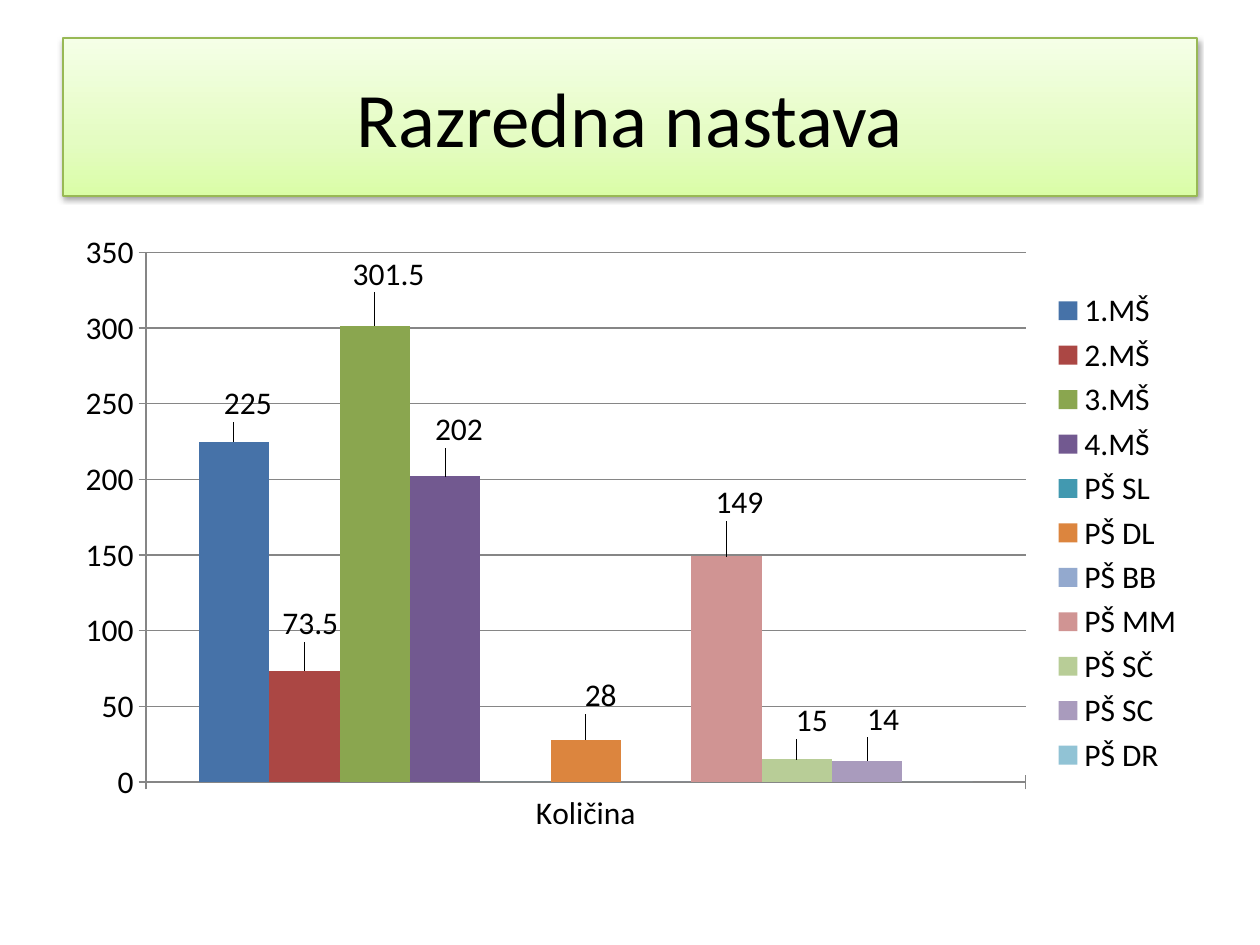
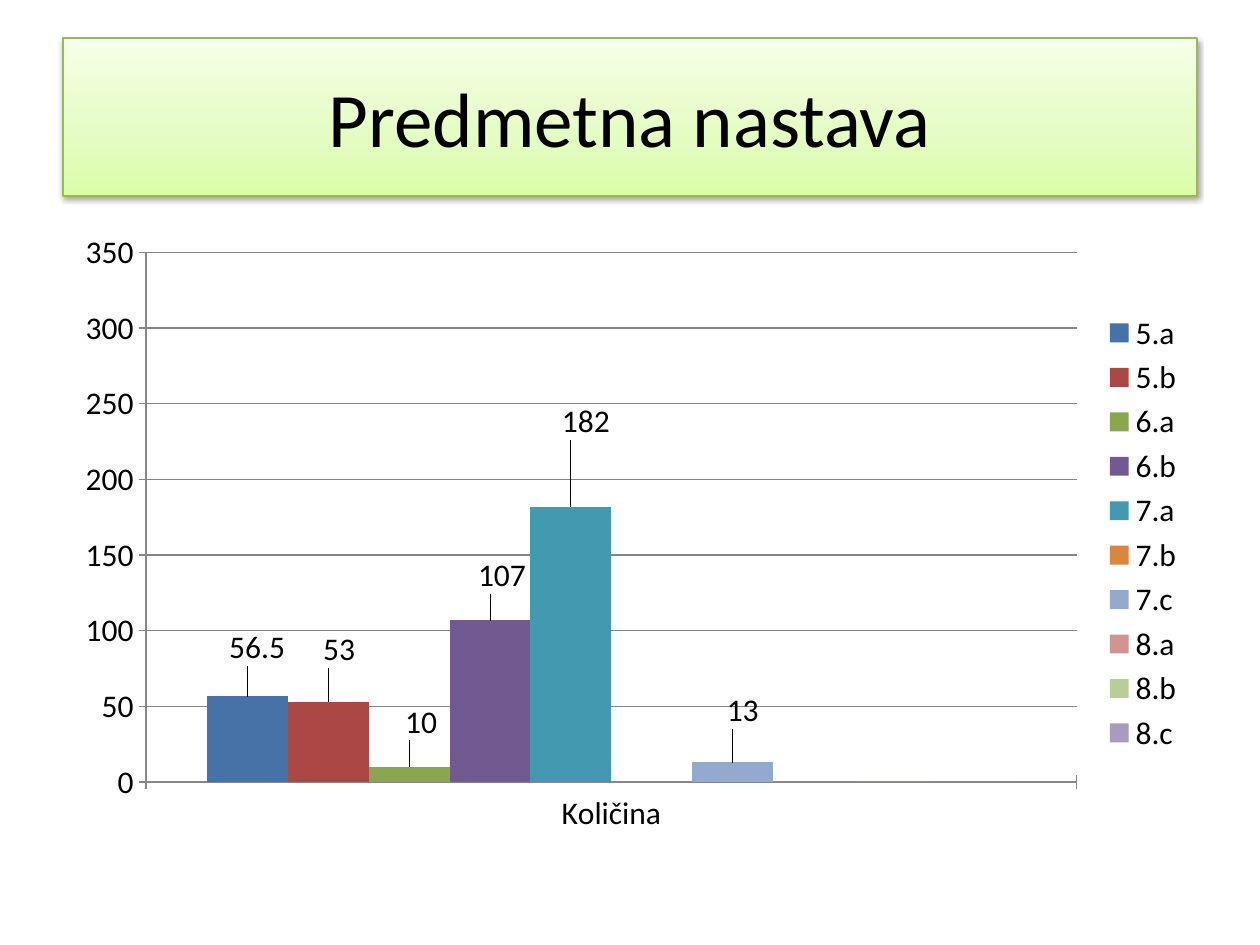
import lxml.etree
import pptx
import pptx.chart.data
import pptx.dml.color
import pptx.enum.chart
import pptx.enum.text
import pptx.oxml
import pptx.oxml.ns
import pptx.util

CATEGORY = "Količina"
LESSONS = [
    ("Razredna nastava", [
        ("1.MŠ", 225, (14, 32)),
        ("2.MŠ", 73.5, (6, 41)),
        ("3.MŠ", 301.5, (14, 46)),
        ("4.MŠ", 202, (14, 41)),
        ("PŠ SL", 0, None),
        ("PŠ DL", 28, (15, 38)),
        ("PŠ BB", 0, None),
        ("PŠ MM", 149, (13, 48)),
        ("PŠ SČ", 15, (15, 33)),
        ("PŠ SC", 14, (16, 36)),
        ("PŠ DR", 0, None),
    ]),
    ("Predmetna nastava", [
        ("5.a", 56.5, (10, 43)),
        ("5.b", 53, (11, 46)),
        ("6.a", 10, (12, 39)),
        ("6.b", 107, (12, 39)),
        ("7.a", 182, (15, 79)),
        ("7.b", 0, None),
        ("7.c", 13, (10, 46)),
        ("8.a", 0, None),
        ("8.b", 0, None),
        ("8.c", 0, None),
    ]),
]

BAR_COLOURS = ["4672A8", "AB4744", "8AA64F", "725990", "4299B0", "DC853E",
               "93A9CE", "D09493", "B8CD97", "A99BBD", "91C3D5"]
BAND_STOPS = [(0, "DAFDA7"), (35, "E4FCC2"), (100, "F5FFE7")]
BAND_LINE, INK, GRID = "98B955", "000000", "868686"
FONT = "Calibri"

PX = 914400 // 126
SLIDE_SIZE = (1260, 945)
TITLE_BOX = (63, 38, 1134, 158)
CHART_BOX = (63, 221, 1134, 624)
USUAL_RISE = 18


def colour(hex_code):
    return pptx.dml.color.RGBColor.from_string(hex_code)


def box(px_values):
    return [pptx.util.Emu(value * PX) for value in px_values]


def style_font(font, size):
    font.name = FONT
    font.size = pptx.util.Pt(size)
    font.color.rgb = colour(INK)


def add_title(slide, wording):
    title = slide.shapes.title
    title.left, title.top, title.width, title.height = box(TITLE_BOX)
    title.text = wording
    title.text_frame.vertical_anchor = pptx.enum.text.MSO_ANCHOR.MIDDLE
    paragraph = title.text_frame.paragraphs[0]
    paragraph.alignment = pptx.enum.text.PP_ALIGN.CENTER
    style_font(paragraph.font, 44)

    namespace = pptx.oxml.ns.nsdecls("a")
    stops = "".join(
        f'<a:gs pos="{position * 1000}"><a:srgbClr val="{code}"/></a:gs>'
        for position, code in BAND_STOPS)
    properties = title._element.spPr
    properties.append(pptx.oxml.parse_xml(
        f'<a:gradFill {namespace} rotWithShape="1"><a:gsLst>{stops}</a:gsLst>'
        '<a:lin ang="16200000" scaled="0"/></a:gradFill>'))
    title.line.color.rgb = colour(BAND_LINE)
    title.line.width = pptx.util.Pt(0.75)
    properties.append(pptx.oxml.parse_xml(
        f'<a:effectLst {namespace}><a:outerShdw blurRad="40000" dist="20000" '
        'dir="5400000" rotWithShape="0"><a:srgbClr val="000000">'
        '<a:alpha val="38000"/></a:srgbClr></a:outerShdw></a:effectLst>'))


def add_value_label(series, shift):
    label = series.points[0].data_label
    label.position = pptx.enum.chart.XL_LABEL_POSITION.OUTSIDE_END
    right, rise = shift
    x = right / CHART_BOX[2]
    y = (USUAL_RISE - rise) / CHART_BOX[3]
    index = series._element.xpath(".//c:dLbl/c:idx")[0]
    index.addnext(pptx.oxml.parse_xml(
        f'<c:layout {pptx.oxml.ns.nsdecls("c")}><c:manualLayout>'
        f'<c:x val="{x:.4f}"/><c:y val="{y:.4f}"/>'
        '</c:manualLayout></c:layout>'))


def add_quantity_chart(slide, classes):
    quantities = pptx.chart.data.CategoryChartData()
    quantities.categories = [CATEGORY]
    for name, quantity, _ in classes:
        quantities.add_series(name, [quantity])
    chart = slide.shapes.add_chart(
        pptx.enum.chart.XL_CHART_TYPE.COLUMN_CLUSTERED,
        *box(CHART_BOX), quantities).chart
    style_font(chart.font, 18)
    chart.has_title = False
    chart.has_legend = True
    chart.legend.position = pptx.enum.chart.XL_LEGEND_POSITION.RIGHT
    chart.legend.include_in_layout = False

    for axis in (chart.category_axis, chart.value_axis):
        axis.major_tick_mark = pptx.enum.chart.XL_TICK_MARK.CROSS
        axis.format.line.color.rgb = colour(GRID)
    scale = chart.value_axis
    scale.minimum_scale, scale.maximum_scale, scale.major_unit = 0, 350, 50
    scale.has_major_gridlines = True
    scale.major_gridlines.format.line.color.rgb = colour(GRID)

    bars = chart.plots[0]
    bars.gap_width = 150
    bars.overlap = 0
    bars.vary_by_categories = False
    for series, (_, _, shift), code in zip(bars.series, classes, BAR_COLOURS):
        series.format.fill.solid()
        series.format.fill.fore_color.rgb = colour(code)
        if shift:
            add_value_label(series, shift)


def main():
    deck = pptx.Presentation()
    deck.slide_width, deck.slide_height = box(SLIDE_SIZE)
    for wording, classes in LESSONS:
        slide = deck.slides.add_slide(deck.slide_layouts[5])
        add_title(slide, wording)
        add_quantity_chart(slide, classes)
    deck.save("out.pptx")


if __name__ == "__main__":
    main()
